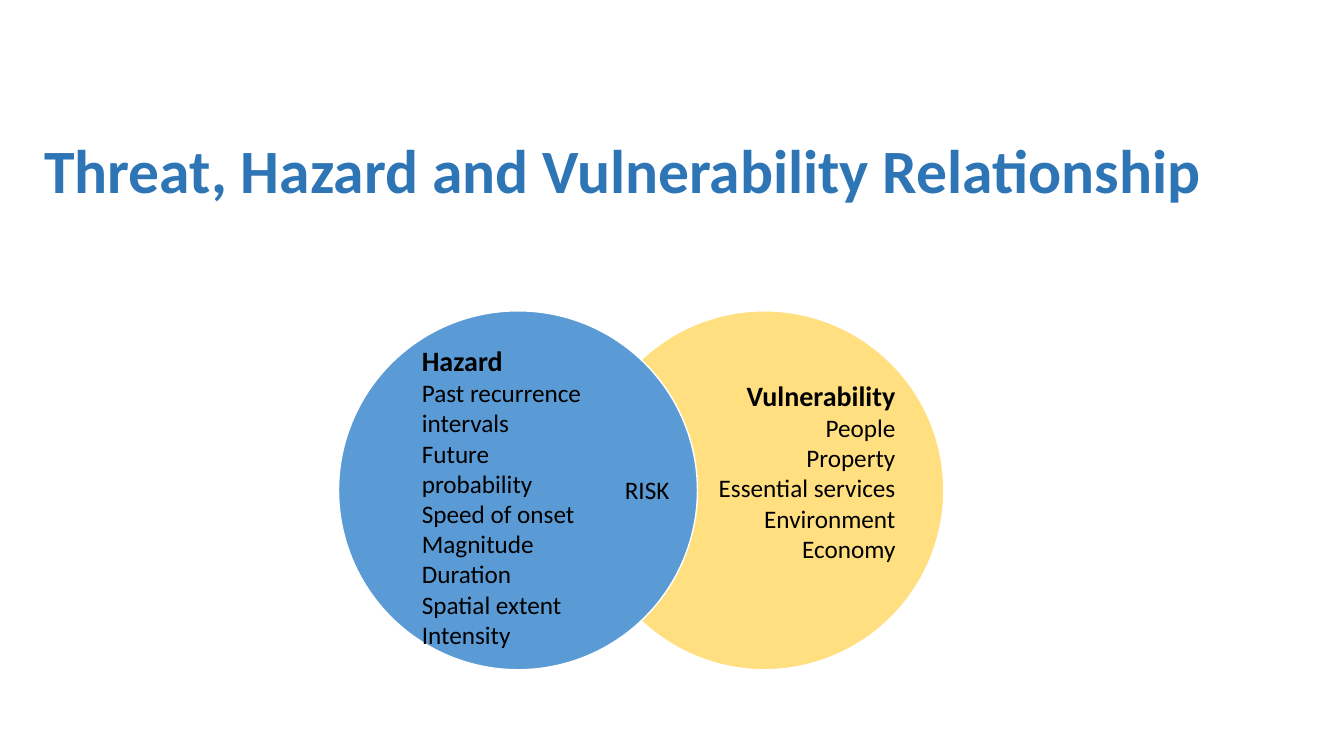
from dataclasses import dataclass

from lxml import etree
from pptx import Presentation
from pptx import util as u
from pptx.dml.color import RGBColor
from pptx.enum import shapes, text
from pptx.oxml import ns

COLOURS = {
    "title": "2E75B6",
    "hazard": "5B9BD5",
    "vulnerability": "FFC000",
    "outline": "FFFFFF",
    "text": "000000",
}
FONT = "Calibri"
CIRCLE_TOP = 222
DIAMETER = 256.4


@dataclass(frozen=True)
class Circle:
    heading: str
    items: tuple[str, ...]
    left: float
    colour: str
    opacity: int
    align: text.PP_ALIGN
    insets: tuple[float, float, float, float]


@dataclass(frozen=True)
class Label:
    words: str
    bounds: tuple[float, float, float, float]
    size: float
    colour: str
    bold: bool
    wrap: bool
    spacing: float
    anchor: text.MSO_ANCHOR


CIRCLES = (
    Circle("Vulnerability",
           ("People", "Property", "Essential services", "Environment", "Economy"),
           417.8, "vulnerability", 50, text.PP_ALIGN.RIGHT, (0, 0, -3, 27.6)),
    Circle("Hazard",
           ("Past recurrence intervals", "Future probability", "Speed of onset",
            "Magnitude", "Duration", "Spatial extent", "Intensity"),
           241.8, "hazard", 100, text.PP_ALIGN.LEFT, (22, 9, 41, 0)),
)
LABELS = (
    Label("Threat, Hazard and Vulnerability Relationship", (24.5, 72, 913, 104.4),
          44, "title", True, True, 0.9, text.MSO_ANCHOR.MIDDLE),
    Label("RISK", (439.2, 335.5, 46.8, 29),
          18, "text", False, False, 1, text.MSO_ANCHOR.TOP),
)


def rgb(name: str) -> RGBColor:
    return RGBColor.from_string(COLOURS[name])


def add_span(para, words: str, size: float, colour: str, bold: bool) -> None:
    span = para.add_run()
    span.text = words
    span.font.name = FONT
    span.font.size = u.Pt(size)
    span.font.bold = bold
    span.font.color.rgb = rgb(colour)


def set_opacity(shape, percent: int) -> None:
    colour = shape.fill._xPr.find(".//" + ns.qn("a:srgbClr"))
    etree.SubElement(colour, ns.qn("a:alpha"), val=str(percent * 1000))


def add_circle(page, circle: Circle) -> None:
    shape = page.shapes.add_shape(
        shapes.MSO_SHAPE.OVAL, u.Pt(circle.left), u.Pt(CIRCLE_TOP),
        u.Pt(DIAMETER), u.Pt(DIAMETER))
    shape.shadow.inherit = False
    shape.fill.solid()
    shape.fill.fore_color.rgb = rgb(circle.colour)
    if circle.opacity < 100:
        set_opacity(shape, circle.opacity)
    shape.line.color.rgb = rgb("outline")
    shape.line.width = u.Pt(1)

    frame = shape.text_frame
    frame.word_wrap = True
    frame.vertical_anchor = text.MSO_ANCHOR.MIDDLE
    (frame.margin_left, frame.margin_top,
     frame.margin_right, frame.margin_bottom) = map(u.Pt, circle.insets)
    for index, words in enumerate((circle.heading, *circle.items)):
        is_heading = index == 0
        para = frame.paragraphs[0] if is_heading else frame.add_paragraph()
        para.alignment = circle.align
        add_span(para, words, 20 if is_heading else 18, "text", is_heading)


def add_label(page, label: Label) -> None:
    box = page.shapes.add_textbox(*map(u.Pt, label.bounds))
    frame = box.text_frame
    frame.word_wrap = label.wrap
    frame.vertical_anchor = label.anchor
    para = frame.paragraphs[0]
    para.line_spacing = label.spacing
    add_span(para, label.words, label.size, label.colour, label.bold)


def main() -> None:
    deck = Presentation()
    deck.slide_width, deck.slide_height = u.Pt(960), u.Pt(540)
    page = deck.slides.add_slide(deck.slide_layouts[6])
    for circle in CIRCLES:
        add_circle(page, circle)
    for label in LABELS:
        add_label(page, label)
    deck.save("out.pptx")


if __name__ == "__main__":
    main()
